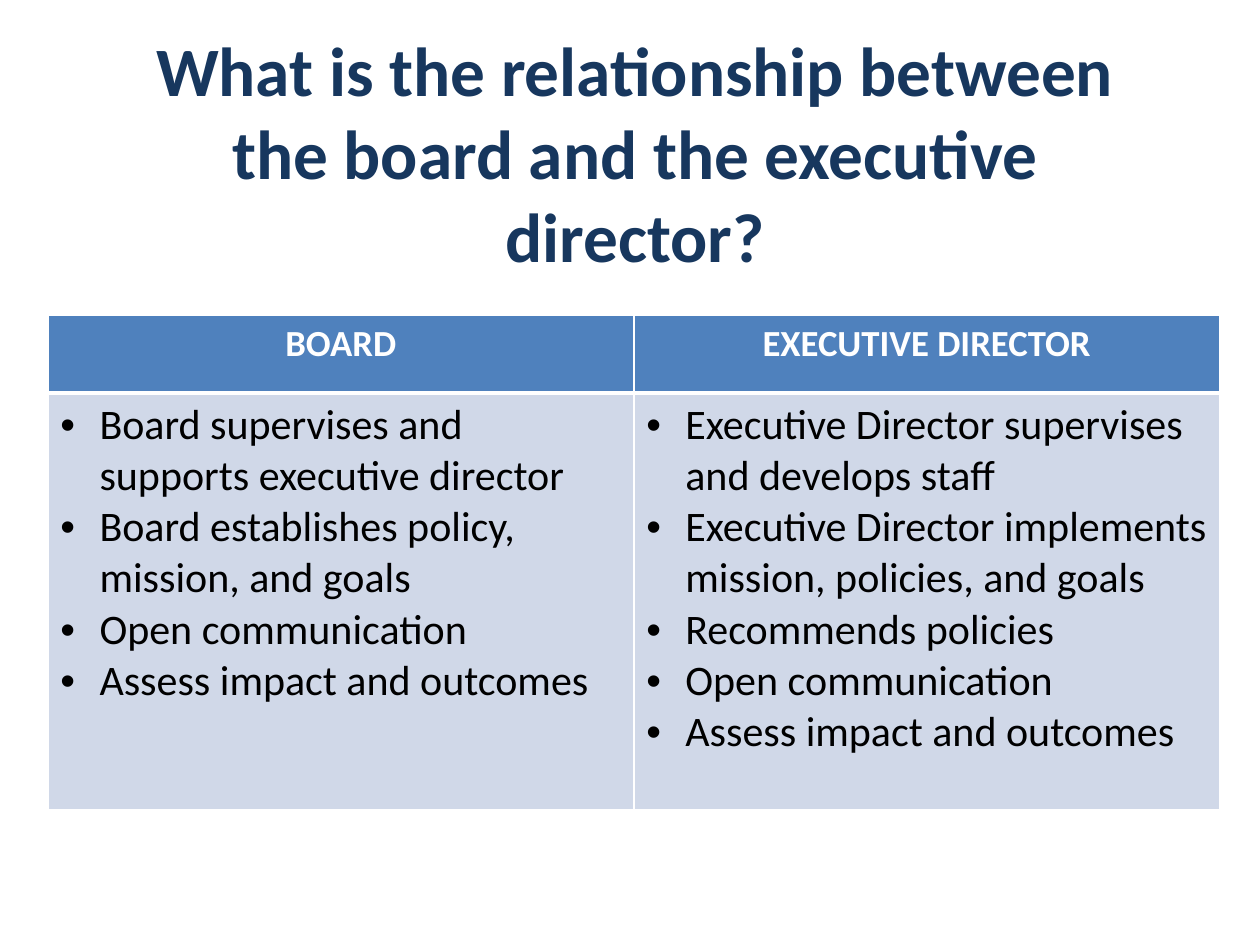
from pptx import Presentation
from pptx.dml.color import RGBColor
from pptx.enum.text import MSO_ANCHOR, PP_ALIGN
from pptx.oxml import parse_xml
from pptx.oxml.ns import nsdecls
from pptx.util import Inches, Pt

TITLE = "What is the relationship between the board and the executive director?"
COLUMNS = [
    ("BOARD", [
        "Board supervises and supports executive director",
        "Board establishes policy, mission, and goals",
        "Open communication",
        "Assess impact and outcomes",
    ]),
    ("EXECUTIVE DIRECTOR", [
        "Executive Director supervises and develops staff",
        "Executive Director implements mission, policies, and goals",
        "Recommends policies",
        "Open communication",
        "Assess impact and outcomes",
    ]),
]

THEME = {
    "font": "Calibri",
    "title": "17375E", "header_text": "FFFFFF", "body_text": "000000",
    "header_fill": "4F81BD", "body_fill": "D0D8E8", "border": "FFFFFF",
    "title_size": 39.6, "header_size": 21, "body_size": 24,
}
COLUMN_WIDTH = 4.65
ROW_HEIGHTS = [0.62, 3.31]
BULLET_INDENT = Inches(0.31)


def write_text(frame, lines, *, size, color, bold=False, align=PP_ALIGN.LEFT, bullet=False):
    for index, line in enumerate(lines):
        paragraph = frame.paragraphs[0] if index == 0 else frame.add_paragraph()
        paragraph.alignment = align
        run = paragraph.add_run()
        run.text = line
        run.font.name = THEME["font"]
        run.font.size = Pt(size)
        run.font.bold = bold
        run.font.color.rgb = RGBColor.from_string(color)
        if bullet:
            properties = paragraph._p.get_or_add_pPr()
            properties.set("marL", str(BULLET_INDENT))
            properties.set("indent", str(-BULLET_INDENT))
            properties.append(parse_xml(f'<a:buFont {nsdecls("a")} typeface="Arial"/>'))
            properties.append(parse_xml(f'<a:buChar {nsdecls("a")} char="•"/>'))


def style_cell(cell, fill, bottom_width):
    """Fill the cell and draw 1 pt borders, with its own width at the bottom."""
    cell.fill.solid()
    cell.fill.fore_color.rgb = RGBColor.from_string(fill)
    widths = {"lnL": 1, "lnR": 1, "lnT": 1, "lnB": bottom_width}
    for index, (side, width) in enumerate(widths.items()):
        border = parse_xml(
            f'<a:{side} {nsdecls("a")} w="{Pt(width)}"><a:solidFill>'
            f'<a:srgbClr val="{THEME["border"]}"/></a:solidFill></a:{side}>')
        cell._tc.get_or_add_tcPr().insert(index, border)


def add_title(slide):
    box = slide.shapes.add_textbox(Inches(0.73), Inches(0.92), Inches(8.62), Inches(0.57))
    frame = box.text_frame
    frame.word_wrap = True
    frame.vertical_anchor = MSO_ANCHOR.MIDDLE
    write_text(frame, [TITLE], size=THEME["title_size"], color=THEME["title"],
               bold=True, align=PP_ALIGN.CENTER)


def add_comparison_table(slide):
    table = slide.shapes.add_table(
        len(ROW_HEIGHTS), len(COLUMNS), Inches(0.38), Inches(2.5),
        Inches(COLUMN_WIDTH * len(COLUMNS)), Inches(sum(ROW_HEIGHTS))).table
    table.horz_banding = False
    for row, height in zip(table.rows, ROW_HEIGHTS):
        row.height = Inches(height)
    for index, (heading, duties) in enumerate(COLUMNS):
        table.columns[index].width = Inches(COLUMN_WIDTH)
        header, body = table.cell(0, index), table.cell(1, index)
        style_cell(header, THEME["header_fill"], bottom_width=3)
        style_cell(body, THEME["body_fill"], bottom_width=1)
        write_text(header.text_frame, [heading], size=THEME["header_size"],
                   color=THEME["header_text"], bold=True, align=PP_ALIGN.CENTER)
        write_text(body.text_frame, duties, size=THEME["body_size"],
                   color=THEME["body_text"], bullet=True)
    # The body row's top edge meets the header's thick bottom edge.
    for cell in table.rows[1].cells:
        cell._tc.tcPr[2].set("w", str(Pt(3)))


def main():
    presentation = Presentation()
    presentation.slide_width = Inches(10)
    presentation.slide_height = Inches(7.5)
    slide = presentation.slides.add_slide(presentation.slide_layouts[6])
    add_title(slide)
    add_comparison_table(slide)
    presentation.save("out.pptx")


if __name__ == "__main__":
    main()
